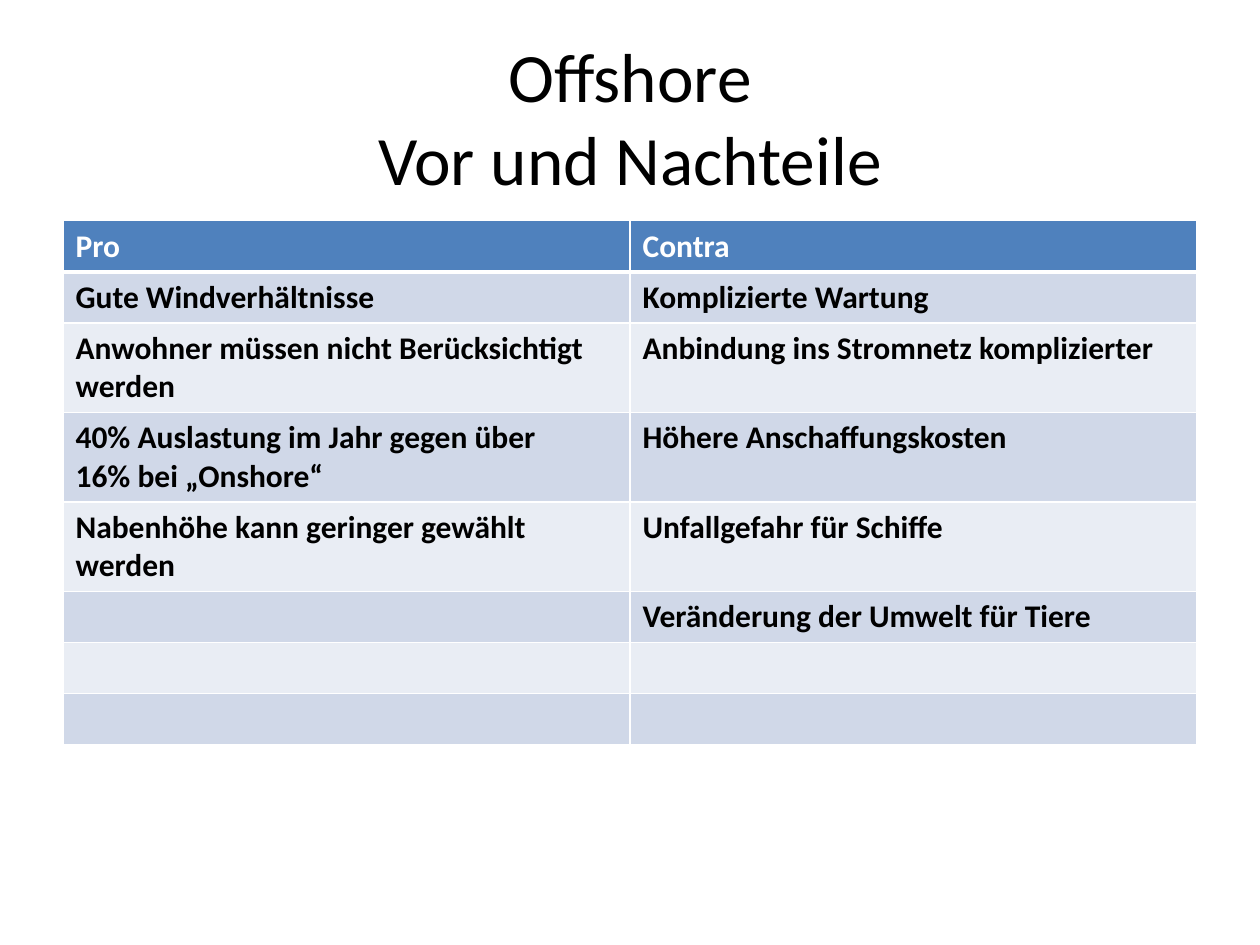
import dataclasses

import lxml.etree
import pptx
import pptx.dml.color
import pptx.enum.text
import pptx.oxml.ns
import pptx.util

Cm = pptx.util.Cm
Pt = pptx.util.Pt

FONT = "Calibri"
BLACK = "000000"
WHITE = "FFFFFF"
HEADER_FILL = "4F81BD"
BAND_FILLS = ("D0D8E8", "E9EDF4")
LINE_HEIGHT = 0.76
CELL_PADDING = 0.27


@dataclasses.dataclass
class Comparison:
    pro: str = ""
    contra: str = ""
    lines: int = 1


COMPARISONS = [
    Comparison("Pro", "Contra"),
    Comparison("Gute Windverhältnisse", "Komplizierte Wartung"),
    Comparison("Anwohner müssen nicht Berücksichtigt werden",
               "Anbindung ins Stromnetz komplizierter", 2),
    Comparison("40% Auslastung im Jahr gegen über\n16% bei „Onshore“",
               "Höhere Anschaffungskosten", 2),
    Comparison("Nabenhöhe kann geringer gewählt werden",
               "Unfallgefahr für Schiffe", 2),
    Comparison(contra="Veränderung der Umwelt für Tiere"),
    Comparison(),
    Comparison(),
]


def color(value: str) -> pptx.dml.color.RGBColor:
    return pptx.dml.color.RGBColor.from_string(value)


def add_span(para, text: str, size: float, shade: str, bold: bool = False) -> None:
    span = para.add_run()
    span.text = text
    span.font.name = FONT
    span.font.size = Pt(size)
    span.font.bold = bold
    span.font.color.rgb = color(shade)


def set_borders(cell, top: float, bottom: float) -> None:
    """Give a cell white edges; widths are in points."""
    properties = cell._tc.get_or_add_tcPr()
    edges = (("lnL", 1), ("lnR", 1), ("lnT", top), ("lnB", bottom))
    for index, (tag, width) in enumerate(edges):
        line = lxml.etree.Element(pptx.oxml.ns.qn(f"a:{tag}"), w=str(Pt(width)))
        fill = lxml.etree.SubElement(line, pptx.oxml.ns.qn("a:solidFill"))
        lxml.etree.SubElement(fill, pptx.oxml.ns.qn("a:srgbClr"), val=WHITE)
        properties.insert(index, line)


def fill_cell(cell, text: str, row: int) -> None:
    header = row == 0
    cell.fill.solid()
    cell.fill.fore_color.rgb = color(HEADER_FILL if header else BAND_FILLS[(row - 1) % 2])
    set_borders(cell, top=3 if row == 1 else 1, bottom=3 if header else 1)
    if not text:
        cell.text_frame.paragraphs[0].font.size = Pt(18)
        return
    for index, line in enumerate(text.split("\n")):
        frame = cell.text_frame
        para = frame.add_paragraph() if index else frame.paragraphs[0]
        add_span(para, line, 18, WHITE if header else BLACK, bold=True)


def add_title(page) -> None:
    box = page.shapes.title
    box.left, box.top, box.width, box.height = Cm(1.27), Cm(0.76), Cm(22.86), Cm(3.18)
    box.text_frame.vertical_anchor = pptx.enum.text.MSO_ANCHOR.MIDDLE
    para = box.text_frame.paragraphs[0]
    para.alignment = pptx.enum.text.PP_ALIGN.CENTER
    add_span(para, "Offshore", 39.6, BLACK)
    para.add_line_break()
    add_span(para, "Vor und Nachteile", 39.6, BLACK)


def add_comparison_table(page, comparisons: list[Comparison]) -> None:
    heights = [CELL_PADDING + LINE_HEIGHT * item.lines for item in comparisons]
    table = page.shapes.add_table(len(comparisons), 2, Cm(1.27), Cm(4.45),
                                  Cm(22.86), Cm(sum(heights))).table
    for row, (item, height) in enumerate(zip(comparisons, heights)):
        table.rows[row].height = Cm(height)
        for column, text in enumerate((item.pro, item.contra)):
            fill_cell(table.cell(row, column), text, row)


def main() -> None:
    deck = pptx.Presentation()
    deck.slide_width, deck.slide_height = Cm(25.4), Cm(19.05)
    # Title-only layout
    page = deck.slides.add_slide(deck.slide_layouts[5])
    add_title(page)
    add_comparison_table(page, COMPARISONS)
    deck.save("out.pptx")


if __name__ == "__main__":
    main()
